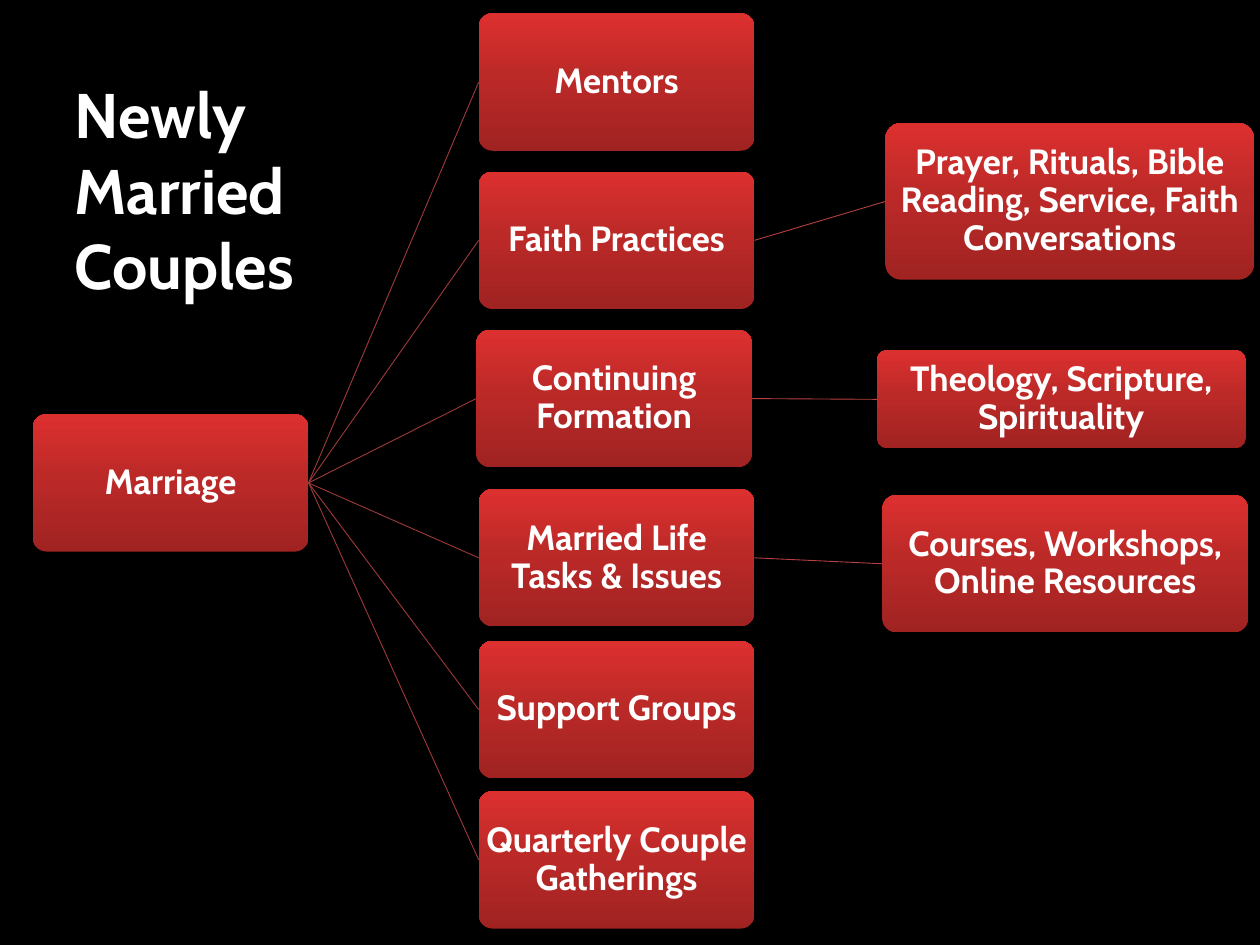
import copy

import pptx
import pptx.dml.color
import pptx.enum.shapes
import pptx.enum.text
import pptx.oxml
import pptx.oxml.ns
import pptx.util

Cm = pptx.util.Cm
Pt = pptx.util.Pt

# Content: positions and sizes in centimetres
FONT = "Cabin"
COLORS = {
    "background": "000000",
    "text": "FFFFFF",
    "topic_line": "9F3A39",
    "detail_line": "B44140",
}
BOX_GRADIENT = [(0, "A02322"), (0.55, "BC2A28"), (1, "DC302F")]
BOX_SIZE = (5.56, 2.77)
TITLE = "Newly Married Couples"
ROOT = ("Marriage", 0.66, 8.35)
# Topic text, left, top, and its detail: text, left, top, width, height
TOPICS = [
    ("Mentors", 9.65, 0.27, None),
    ("Faith Practices", 9.65, 3.46,
     ("Prayer, Rituals, Bible Reading, Service, Faith Conversations",
      17.85, 2.48, 7.43, 3.16)),
    ("Continuing Formation", 9.6, 6.65,
     ("Theology, Scripture, Spirituality", 17.68, 7.06, 7.43, 1.98)),
    ("Married Life Tasks & Issues", 9.65, 9.86,
     ("Courses, Workshops, Online Resources", 17.79, 9.98, 7.37, 2.77)),
    ("Support Groups", 9.65, 12.92, None),
    ("Quarterly Couple Gatherings", 9.65, 15.95, None),
]


def rgb(value):
    return pptx.dml.color.RGBColor.from_string(value)


def format_text(paragraph, size, alignment):
    paragraph.alignment = alignment
    paragraph.font.name = FONT
    paragraph.font.size = Pt(size)
    paragraph.font.bold = True
    paragraph.font.color.rgb = rgb(COLORS["text"])


def fill_with_gradient(shape):
    fill = shape.fill
    fill.gradient()
    fill.gradient_angle = 90
    # The default gradient has two stops; add the third
    stop_list = shape._element.spPr.find(".//" + pptx.oxml.ns.qn("a:gsLst"))
    stop_list.append(copy.deepcopy(stop_list[-1]))
    for stop, (position, color) in zip(fill.gradient_stops, BOX_GRADIENT):
        stop.position = position
        stop.color.rgb = rgb(color)


def add_box(slide, text, left, top, width=BOX_SIZE[0], height=BOX_SIZE[1]):
    shape = slide.shapes.add_shape(
        pptx.enum.shapes.MSO_SHAPE.ROUNDED_RECTANGLE,
        Cm(left), Cm(top), Cm(width), Cm(height))
    shape.adjustments[0] = 0.1
    shape.shadow.inherit = False
    shape.line.fill.background()
    fill_with_gradient(shape)

    frame = shape.text_frame
    frame.word_wrap = True
    frame.vertical_anchor = pptx.enum.text.MSO_ANCHOR.MIDDLE
    frame.margin_left = frame.margin_right = Cm(0.04)
    frame.margin_top = frame.margin_bottom = Cm(0.04)
    frame.text = text
    paragraph = frame.paragraphs[0]
    paragraph.line_spacing = 0.9
    format_text(paragraph, 20, pptx.enum.text.PP_ALIGN.CENTER)
    return shape


def connect(slide, parent, child, color):
    connector = slide.shapes.add_connector(
        pptx.enum.shapes.MSO_CONNECTOR.STRAIGHT, 0, 0, 0, 0)
    connector.begin_connect(parent, 3)
    connector.end_connect(child, 1)
    connector.line.color.rgb = rgb(color)
    connector.line.width = Pt(0.5)
    connector._element.spPr.append(pptx.oxml.parse_xml(
        "<a:effectLst %s/>" % pptx.oxml.ns.nsdecls("a")))


def main():
    presentation = pptx.Presentation()
    presentation.slide_width = Cm(25.4)
    presentation.slide_height = Cm(19.05)
    slide = presentation.slides.add_slide(presentation.slide_layouts[5])
    slide.background.fill.solid()
    slide.background.fill.fore_color.rgb = rgb(COLORS["background"])

    # Title
    title = slide.shapes.title
    title.left, title.top = Cm(1.25), Cm(1.4)
    title.width, title.height = Cm(7.2), Cm(4.88)
    frame = title.text_frame
    frame.text = TITLE
    frame.word_wrap = True
    frame.auto_size = pptx.enum.text.MSO_AUTO_SIZE.NONE
    frame.vertical_anchor = pptx.enum.text.MSO_ANCHOR.TOP
    format_text(frame.paragraphs[0], 36, pptx.enum.text.PP_ALIGN.LEFT)

    # Tree: root, topics and details
    root = add_box(slide, *ROOT)
    for text, left, top, detail in TOPICS:
        topic = add_box(slide, text, left, top)
        connect(slide, root, topic, COLORS["topic_line"])
        if detail:
            connect(slide, topic, add_box(slide, *detail),
                    COLORS["detail_line"])

    presentation.save("out.pptx")


if __name__ == "__main__":
    main()
